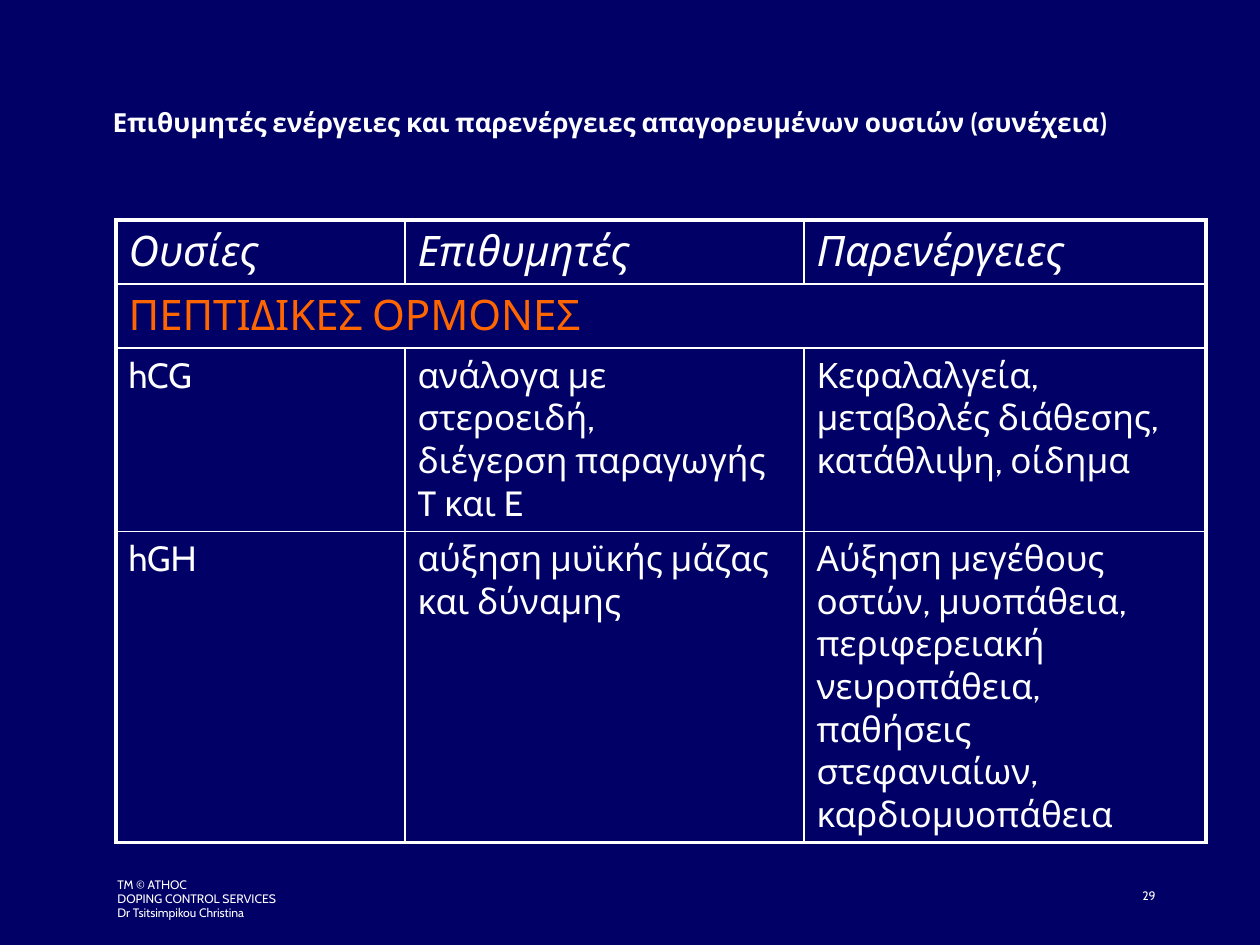
from lxml import etree
from pptx import Presentation
from pptx import util as u
from pptx.dml.color import RGBColor
from pptx.enum import text
from pptx.oxml.ns import qn

TITLE = "Επιθυμητές ενέργειες και παρενέργειες απαγορευμένων ουσιών (συνέχεια)"
HEADER = ["Ουσίες", "Επιθυμητές", "Παρενέργειες"]
GROUP = ["ΠΕΠΤΙΔΙΚΕΣ ΟΡΜΟΝΕΣ"]
ROWS = [
    HEADER,
    GROUP,
    ["hCG", "ανάλογα με στεροειδή,\nδιέγερση παραγωγής T και E",
     "Κεφαλαλγεία, μεταβολές διάθεσης, κατάθλιψη, οίδημα"],
    ["hGH", "αύξηση μυϊκής μάζας και δύναμης",
     "Αύξηση μεγέθους οστών, μυοπάθεια, περιφερειακή νευροπάθεια, "
     "παθήσεις στεφανιαίων, καρδιομυοπάθεια"],
]
FOOTER = "TM © ATHOC\vDOPING CONTROL SERVICES\nDr Tsitsimpikou Christina"
PAGE = "29"

THEME = {
    "font": "Cabin", "back": "000066", "ink": "FFFFFF", "accent": "FF6600",
    "title": 15, "head": 24, "body": 20, "small": 7, "small_line": 8,
    "outer": 2.25, "inner": 1,
}
TITLE_BOX = (100, 100, 1091, 59)
FOOTER_BOX = (105, 872, 399, 63)
PAGE_BOX = (906, 882, 262, 63)
TABLE_AT = (116, 220)
COL_WIDTHS = [289, 399, 402]
ROW_HEIGHTS = [64, 64, 183, 311]


def px(n):
    return u.Emu(n * u.Inches(1) // 126)


def color(name):
    return RGBColor.from_string(THEME[name])


def style(tf, size, ink="ink", bold=False, italic=False):
    for p in tf.paragraphs:
        for r in p.runs:
            f = r.font
            f.name, f.size = THEME["font"], u.Pt(THEME[size])
            f.bold, f.italic = bold, italic
            f.color.rgb = color(ink)


def add_text(s, box, content, align=text.PP_ALIGN.LEFT, spacing=None):
    tf = s.shapes.add_textbox(*map(px, box)).text_frame
    tf.word_wrap = True
    tf.text = content
    for p in tf.paragraphs:
        p.alignment = align
        p.line_spacing = spacing
    style(tf, "small")


def set_border(cell, side, weight):
    tcPr = cell._tc.get_or_add_tcPr()
    ln = etree.SubElement(tcPr, qn("a:ln" + side), w=str(u.Pt(THEME[weight])))
    fill = etree.SubElement(ln, qn("a:solidFill"))
    etree.SubElement(fill, qn("a:srgbClr"), val=THEME["ink"])


def add_table(s):
    n_rows, n_cols = len(ROWS), len(COL_WIDTHS)
    frame = s.shapes.add_table(n_rows, n_cols, *map(px, TABLE_AT),
                               px(sum(COL_WIDTHS)), px(sum(ROW_HEIGHTS)))
    table = frame.table
    table.first_row = table.horz_banding = False
    for col, width in zip(table.columns, COL_WIDTHS):
        col.width = px(width)
    for row, height in zip(table.rows, ROW_HEIGHTS):
        row.height = px(height)

    for i, values in enumerate(ROWS):
        merged = len(values) == 1
        if merged:
            table.cell(i, 0).merge(table.cell(i, n_cols - 1))
        for j in range(n_cols):
            cell = table.cell(i, j)
            edges = {"L": j == 0, "R": j == n_cols - 1 or merged,
                     "T": i == 0, "B": i == n_rows - 1}
            for side, is_outer in edges.items():
                if merged and j and side == "L":
                    continue
                if merged and 0 < j < n_cols - 1 and side == "R":
                    continue
                set_border(cell, side, "outer" if is_outer else "inner")
            cell.fill.background()
            if j < len(values):
                cell.text_frame.text = values[j]
                style(cell.text_frame,
                      "head" if values in (HEADER, GROUP) else "body",
                      ink="accent" if values is GROUP else "ink",
                      italic=values is HEADER)


def main():
    prs = Presentation()
    prs.slide_width, prs.slide_height = u.Inches(10), u.Inches(7.5)
    s = prs.slides.add_slide(prs.slide_layouts[5])
    s.background.fill.solid()
    s.background.fill.fore_color.rgb = color("back")

    title = s.shapes.title
    title.left, title.top, title.width, title.height = map(px, TITLE_BOX)
    tf = title.text_frame
    tf.text = TITLE
    tf.word_wrap = True
    tf.auto_size = text.MSO_AUTO_SIZE.NONE
    tf.vertical_anchor = text.MSO_ANCHOR.TOP
    tf.paragraphs[0].alignment = text.PP_ALIGN.LEFT
    style(tf, "title", bold=True)

    add_table(s)
    add_text(s, FOOTER_BOX, FOOTER, spacing=u.Pt(THEME["small_line"]))
    add_text(s, PAGE_BOX, PAGE, align=text.PP_ALIGN.RIGHT)
    prs.save("out.pptx")


if __name__ == "__main__":
    main()
